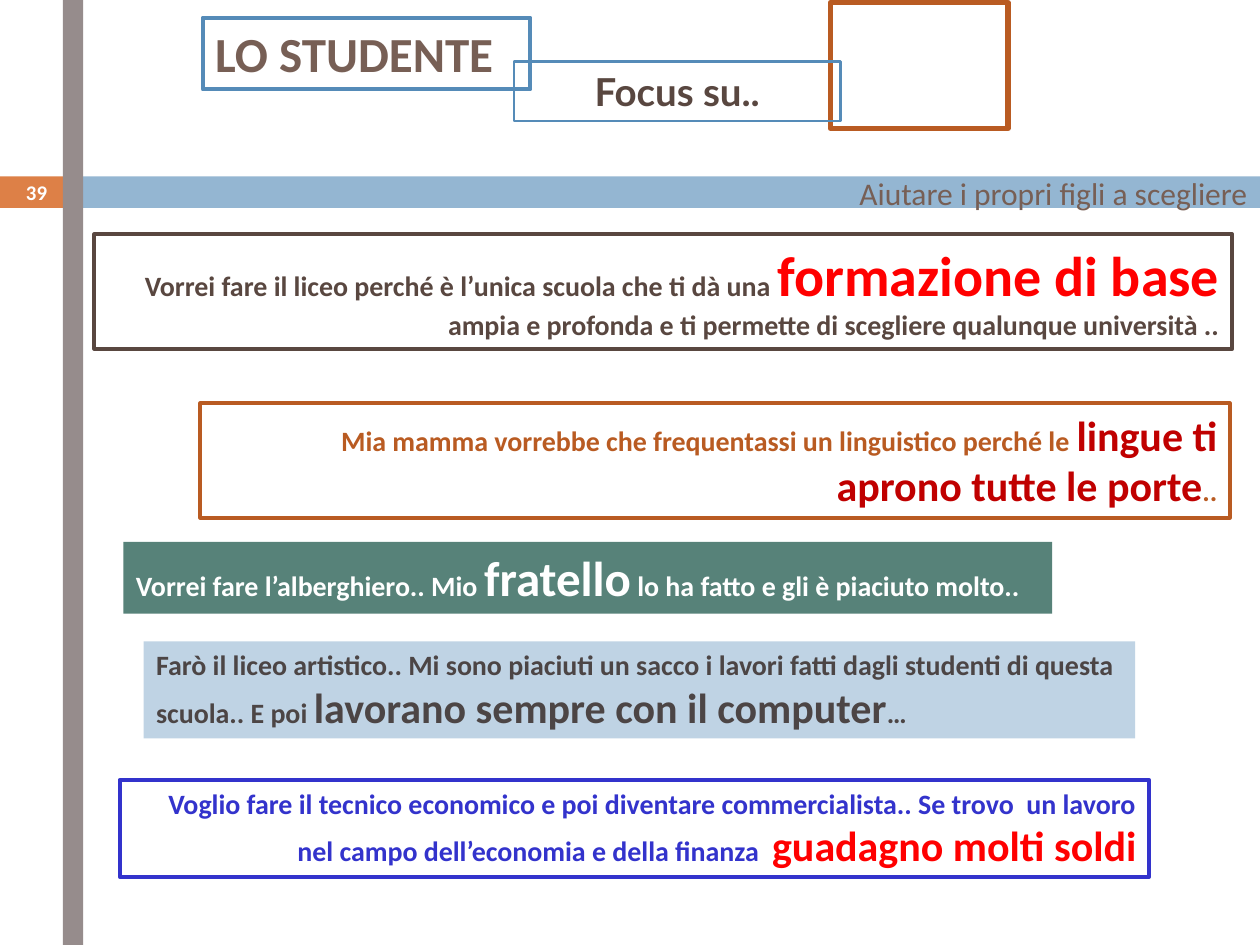
"""Build the slide on what students say when choosing a school."""
from pptx import Presentation
from pptx.dml.color import RGBColor
from pptx.enum import shapes, text
from pptx.util import Inches, Pt

COLORS = {
    "orange": "DD8047", "blue": "94B6D2", "taupe": "968C8C", "brown": "775F55",
    "dark brown": "594740", "steel": "558BB8", "rust": "B95B22", "red": "FF0000",
    "dark red": "C00000", "green": "578279", "pale blue": "BFD3E4",
    "indigo": "3333CC", "charcoal": "4C4545", "white": "FFFFFF",
}
LEFT, CENTER, RIGHT = text.PP_ALIGN.LEFT, text.PP_ALIGN.CENTER, text.PP_ALIGN.RIGHT


def add_box(slide, place, fill=None, line=None, width=2.25):
    shape = slide.shapes.add_shape(shapes.MSO_SHAPE.RECTANGLE, *map(Inches, place))
    shape.shadow.inherit = False
    if fill:
        shape.fill.solid()
        shape.fill.fore_color.rgb = RGBColor.from_string(COLORS[fill])
    else:
        shape.fill.background()
    if line:
        shape.line.color.rgb = RGBColor.from_string(COLORS[line])
        shape.line.width = Pt(width)
    else:
        shape.line.fill.background()
    return shape


def write(shape, runs, align=LEFT, font="Calibri", bold=True, anchor=text.MSO_ANCHOR.TOP):
    frame = shape.text_frame
    frame.word_wrap = True
    frame.vertical_anchor = anchor
    paragraph = frame.paragraphs[0]
    paragraph.alignment = align
    for words, size, color in runs:
        run = paragraph.add_run()
        run.text = words
        run.font.name = font
        run.font.size = Pt(size)
        run.font.bold = bold
        run.font.color.rgb = RGBColor.from_string(COLORS[color])


presentation = Presentation()
presentation.slide_width = Inches(10)
presentation.slide_height = Inches(7.5)
slide = presentation.slides.add_slide(presentation.slide_layouts[6])

add_box(slide, (0, 1.4, 0.58, 0.25), fill="orange")
add_box(slide, (0.65, 1.4, 9.35, 0.25), fill="blue")
add_box(slide, (0.5, 0, 0.16, 7.5), fill="taupe")

footer = slide.shapes.add_textbox(*map(Inches, (5.47, 1.4, 4.53, 0.26)))
write(footer, [("Aiutare i propri figli a scegliere", 18, "brown")], RIGHT,
      bold=False, anchor=text.MSO_ANCHOR.MIDDLE)

title = add_box(slide, (1.61, 0.14, 2.6, 0.57), line="steel")
write(title, [("LO STUDENTE", 28, "brown")])
add_box(slide, (6.59, 0.02, 1.41, 1), line="rust", width=3)
focus = add_box(slide, (4.08, 0.49, 2.59, 0.47), line="steel", width=1.5)
write(focus, [("Focus su..", 22, "dark brown")], CENTER, font="Lato")

number = slide.shapes.add_textbox(*map(Inches, (0, 1.39, 0.58, 0.27)))
write(number, [("39", 11.9, "white")], CENTER, anchor=text.MSO_ANCHOR.MIDDLE)

quotes = [
    ((0.75, 1.86, 9.03, 0.91), None, "dark brown", RIGHT, [
        ("Vorrei fare il liceo perché è l’unica scuola che ti dà una ", 16, "dark brown"),
        ("formazione di base ", 32, "red"),
        ("ampia e profonda e ti permette di scegliere qualunque università ..", 16, "dark brown")]),
    ((1.59, 3.2, 8.17, 0.91), None, "rust", RIGHT, [
        ("Mia mamma vorrebbe che frequentassi un linguistico perché le ", 16, "rust"),
        ("lingue ti aprono tutte le porte", 24, "dark red"),
        ("..", 16, "rust")]),
    ((0.98, 4.3, 7.37, 0.57), "green", None, LEFT, [
        ("Vorrei fare l’alberghiero.. Mio ", 16, "white"),
        ("fratello", 28, "white"),
        (" lo ha fatto e gli è piaciuto molto..", 16, "white")]),
    ((0.95, 6.19, 8.17, 0.77), None, "indigo", RIGHT, [
        ("Voglio fare il tecnico economico e poi diventare commercialista.. Se trovo  un lavoro "
         "nel campo dell’economia e della finanza  ", 16, "indigo"),
        ("guadagno molti soldi", 24, "red")]),
    ((1.14, 5.09, 7.87, 0.77), "pale blue", None, LEFT, [
        ("Farò il liceo artistico.. Mi sono piaciuti un sacco i lavori fatti dagli studenti "
         "di questa scuola.. E poi ", 16, "charcoal"),
        ("lavorano sempre con il computer", 24, "charcoal"),
        ("…", 16, "charcoal")]),
]
for place, fill, line, align, runs in quotes:
    write(add_box(slide, place, fill, line), runs, align)

presentation.save("out.pptx")
